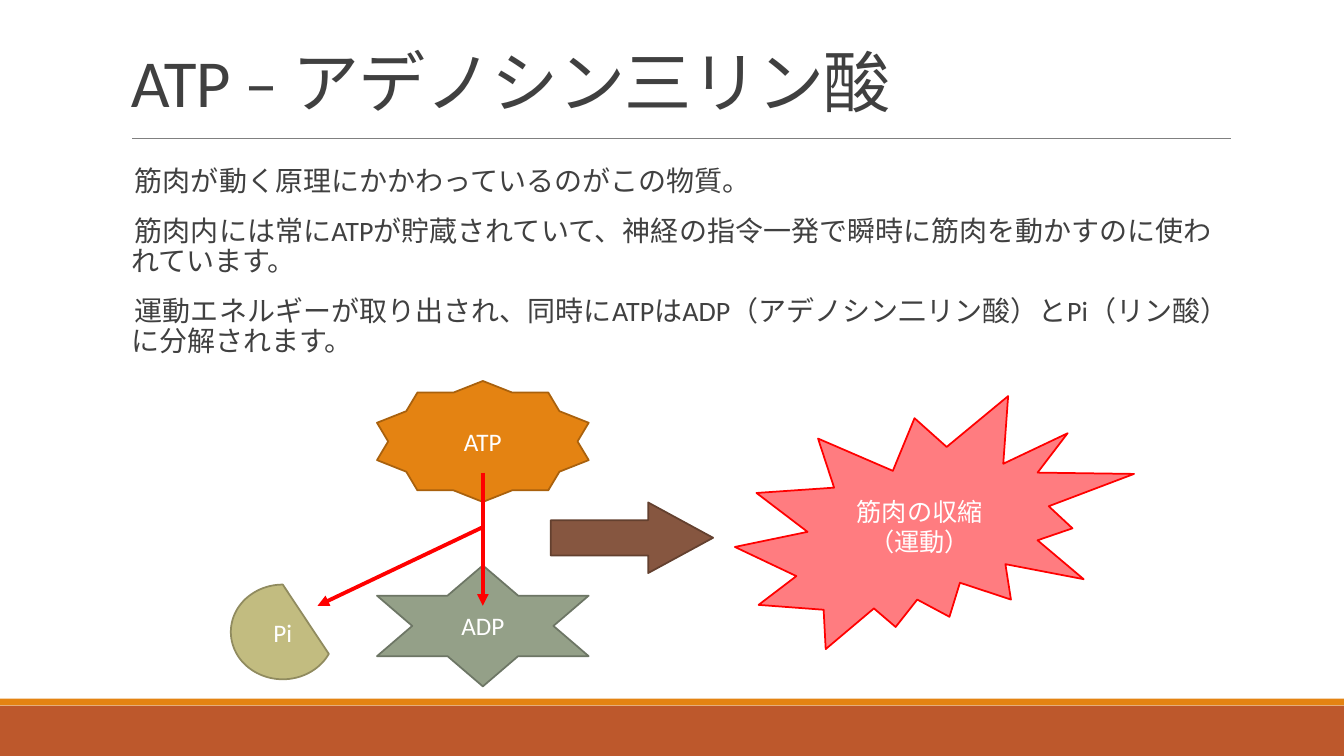
from lxml.etree import SubElement as Sub
from pptx import Presentation
from pptx.dml.color import RGBColor
from pptx.enum.shapes import MSO_CONNECTOR as Link, MSO_SHAPE as Kind
from pptx.enum.text import MSO_ANCHOR as Anchor, PP_ALIGN as Align
from pptx.oxml.ns import qn
from pptx.util import Inches, Pt

WIDE, HIGH = Inches(13.333), Inches(7.5)
INK, WHITE, RED, ORANGE = "404040", "FFFFFF", "FF0000", "E48312"
TITLE = "ATP – アデノシン三リン酸"
BODY = [
    "筋肉が動く原理にかかわっているのがこの物質。",
    "筋肉内には常にATPが貯蔵されていて、神経の指令一発で瞬時に筋肉を動かすのに使われています。",
    "運動エネルギーが取り出され、同時にATPはADP（アデノシン二リン酸）とPi（リン酸）に分解されます。",
]


# Lengths are percentages of the slide's width and height
def across(share):
    return round(WIDE * share / 100)


def down(share):
    return round(HIGH * share / 100)


def place(x, y, w, h):
    return across(x), down(y), across(w), down(h)


def color(code):
    return RGBColor.from_string(code)


def style(para, size, code):
    font = para.font
    font.name, font.size = "Calibri", Pt(size)
    font.color.rgb = color(code)


def fill_text(frame, lines):
    frame.word_wrap = True
    frame.text = "\n".join(lines)
    return frame.paragraphs


def add_title(slide, box):
    frame = slide.shapes.add_textbox(*place(*box)).text_frame
    frame.vertical_anchor = Anchor.BOTTOM
    para = fill_text(frame, [TITLE])[0]
    para.line_spacing = 0.85
    style(para, 48, INK)
    para.runs[0]._r.get_or_add_rPr().set("spc", "-50")


def add_body(slide, box):
    frame = slide.shapes.add_textbox(*place(*box)).text_frame
    frame.margin_left = frame.margin_right = 0
    for i, para in enumerate(fill_text(frame, BODY)):
        para.line_spacing = 0.9
        para.space_before, para.space_after = Pt(12 if i else 0), Pt(2)
        # Hanging indent with a blank bullet
        props = para._p.get_or_add_pPr()
        props.set("marL", str(Inches(0.1)))
        props.set("indent", str(-Inches(0.1)))
        tint = Sub(props, qn("a:buClr"))
        Sub(tint, qn("a:srgbClr")).set("val", ORANGE)
        Sub(props, qn("a:buChar")).set("char", " ")
        style(para, 20, INK)


def add_form(slide, kind, box, fill, edge=None, lines=(), adjust=()):
    form = slide.shapes.add_shape(kind, *place(*box))
    form.shadow.inherit = False
    form.fill.solid()
    form.fill.fore_color.rgb = color(fill)
    if edge:
        form.line.color.rgb = color(edge)
        form.line.width = Pt(1.25)
    else:
        form.line.fill.background()
    for i, value in enumerate(adjust):
        form.adjustments[i] = value
    if lines:
        form.text_frame.vertical_anchor = Anchor.MIDDLE
        for para in fill_text(form.text_frame, lines):
            para.alignment = Align.CENTER
            style(para, 18, WHITE)
    return form


def add_line(slide, start, end, code, width, arrow=False):
    line = slide.shapes.add_connector(
        Link.STRAIGHT, across(start[0]), down(start[1]),
        across(end[0]), down(end[1]))
    line.line.color.rgb = color(code)
    line.line.width = Pt(width)
    if arrow:
        Sub(line.line._get_or_add_ln(), qn("a:tailEnd")).set("type", "triangle")
    Sub(line._element.spPr, qn("a:effectLst"))


def main():
    deck = Presentation()
    deck.slide_width, deck.slide_height = WIDE, HIGH
    slide = deck.slides.add_slide(deck.slide_layouts[6])

    # Footer bars and title rule
    add_form(slide, Kind.RECTANGLE, (0, 93.33, 100, 6.67), "BD582C")
    add_form(slide, Kind.RECTANGLE, (0, 92.4, 100, 0.9), ORANGE)
    add_line(slide, (9.83, 18.35), (91.58, 18.35), "808080", 0.5)

    # Title and explanation
    add_title(slide, (9, 4.13, 82.5, 12.53))
    add_body(slide, (9, 21.47, 82.5, 69.33))

    # ATP splits into ADP and Pi, which drives the muscle
    mid, star = 35.93, (15.75, 16)
    left = mid - star[0] / 2
    add_form(slide, Kind.STAR_10_POINT, (left, 50.4, *star),
             ORANGE, "A9610D", ["ATP"])
    add_form(slide, Kind.STAR_6_POINT, (left, 74.8, *star),
             "94A088", "6D7665", ["ADP"])
    drive = add_form(slide, Kind.DOWN_ARROW, (44.4, 60.4, 5.25, 21.47),
                     "865640", "63402F", adjust=(0.5, 0.92))
    drive.rotation = 270
    add_line(slide, (mid, 62.53), (mid, 80.13), RED, 2.75, True)
    add_form(slide, Kind.EXPLOSION2, (54.68, 52.4, 29.7, 33.47),
             "FF7C80", RED, ["筋肉の収縮", "（運動）"])
    add_line(slide, (mid, 69.73), (23.63, 80.13), RED, 2.75, True)
    add_form(slide, Kind.CHORD, (17.18, 77.33, 7.73, 12.53),
             "C2BC80", "908B5F", ["Pi"], (15.3, 162))

    deck.save("out.pptx")


if __name__ == "__main__":
    main()
